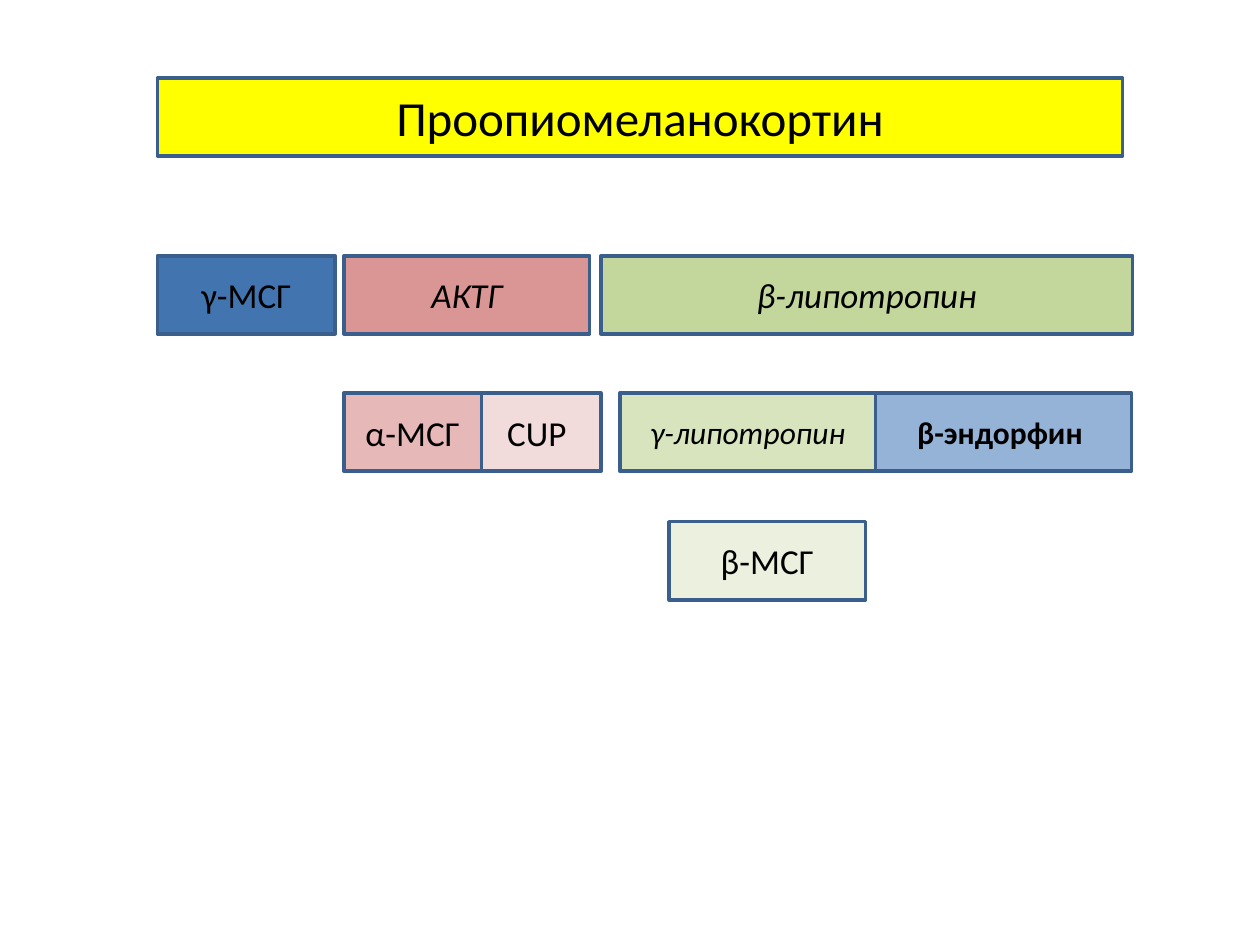
from dataclasses import dataclass

from pptx import Presentation
from pptx.dml.color import RGBColor
from pptx.enum.shapes import MSO_SHAPE as SHAPE
from pptx.enum.text import MSO_ANCHOR as ANCHOR, MSO_AUTO_SIZE as AUTO, PP_ALIGN as ALIGN
from pptx.util import Inches, Pt

# Colours
BLACK = RGBColor(0x00, 0x00, 0x00)
OUTLINE = RGBColor(0x3A, 0x5F, 0x8C)
YELLOW = RGBColor(0xFF, 0xFF, 0x00)
BLUE = RGBColor(0x42, 0x74, 0xAF)
LIGHT_BLUE = RGBColor(0x95, 0xB3, 0xD7)
RED = RGBColor(0xD9, 0x96, 0x94)
LIGHT_RED = RGBColor(0xE6, 0xB9, 0xB8)
PALE_RED = RGBColor(0xF2, 0xDC, 0xDB)
GREEN = RGBColor(0xC3, 0xD6, 0x9B)
LIGHT_GREEN = RGBColor(0xD7, 0xE4, 0xBD)
PALE_GREEN = RGBColor(0xEB, 0xF1, 0xDE)

# Rows and shared left edges, in inches
BAR_HEIGHT = 0.62
PRECURSOR_TOP, PRODUCT_TOP, FRAGMENT_TOP, LAST_TOP = 0.62, 2.03, 3.12, 4.14
LEFT, ACTH_LEFT = 1.25, 2.73


@dataclass(frozen=True)
class Peptide:
    text: str
    left: float
    top: float
    width: float
    fill: RGBColor
    size: int = 20
    bold: bool = False
    italic: bool = False


PRECURSOR = Peptide("Проопиомеланокортин", LEFT, PRECURSOR_TOP, 7.66, YELLOW, size=28)

# CUP comes first, since α-МСГ overlaps its left edge
PEPTIDES = [
    Peptide("γ-МСГ", LEFT, PRODUCT_TOP, 1.41, BLUE),
    Peptide("АКТГ", ACTH_LEFT, PRODUCT_TOP, 1.95, RED, italic=True),
    Peptide("β-липотропин", 4.77, PRODUCT_TOP, 4.22, GREEN, italic=True),
    Peptide("CUP", 3.75, FRAGMENT_TOP, 1.02, PALE_RED),
    Peptide("α-МСГ", ACTH_LEFT, FRAGMENT_TOP, 1.09, LIGHT_RED),
    Peptide("γ-липотропин", 4.92, FRAGMENT_TOP, 2.03, LIGHT_GREEN, size=18, italic=True),
    Peptide("β-эндорфин ", 6.95, FRAGMENT_TOP, 2.03, LIGHT_BLUE, size=18, bold=True),
    Peptide("β-МСГ", 5.31, LAST_TOP, 1.56, PALE_GREEN),
]


def format_bar(sp, peptide: Peptide) -> None:
    """Place a shape as a peptide bar and write its label."""
    place = {
        "left": Inches(peptide.left),
        "top": Inches(peptide.top),
        "width": Inches(peptide.width),
        "height": Inches(BAR_HEIGHT),
    }
    for name, value in place.items():
        setattr(sp, name, value)
    sp.fill.solid()
    sp.fill.fore_color.rgb = peptide.fill
    sp.line.color.rgb = OUTLINE
    sp.line.width = Pt(2)

    tf = sp.text_frame
    frame = {"word_wrap": True, "auto_size": AUTO.NONE, "vertical_anchor": ANCHOR.MIDDLE}
    for name, value in frame.items():
        setattr(tf, name, value)
    p = tf.paragraphs[0]
    p.alignment = ALIGN.CENTER
    r = p.add_run()
    r.text = peptide.text
    font = {
        "name": "Calibri",
        "size": Pt(peptide.size),
        "bold": peptide.bold,
        "italic": peptide.italic,
    }
    for name, value in font.items():
        setattr(r.font, name, value)
    r.font.color.rgb = BLACK


def add_peptide(s, peptide: Peptide) -> None:
    """Add one rectangle for a cleavage product."""
    sp = s.shapes.add_shape(SHAPE.RECTANGLE, 0, 0, 0, 0)
    sp.shadow.inherit = False
    format_bar(sp, peptide)


def main() -> None:
    prs = Presentation()
    prs.slide_width, prs.slide_height = Inches(10), Inches(7.5)
    s = prs.slides.add_slide(prs.slide_layouts[5])

    # Precursor bar is the title
    format_bar(s.shapes.title, PRECURSOR)

    # Cleavage products
    for peptide in PEPTIDES:
        add_peptide(s, peptide)

    prs.save("out.pptx")


if __name__ == "__main__":
    main()
